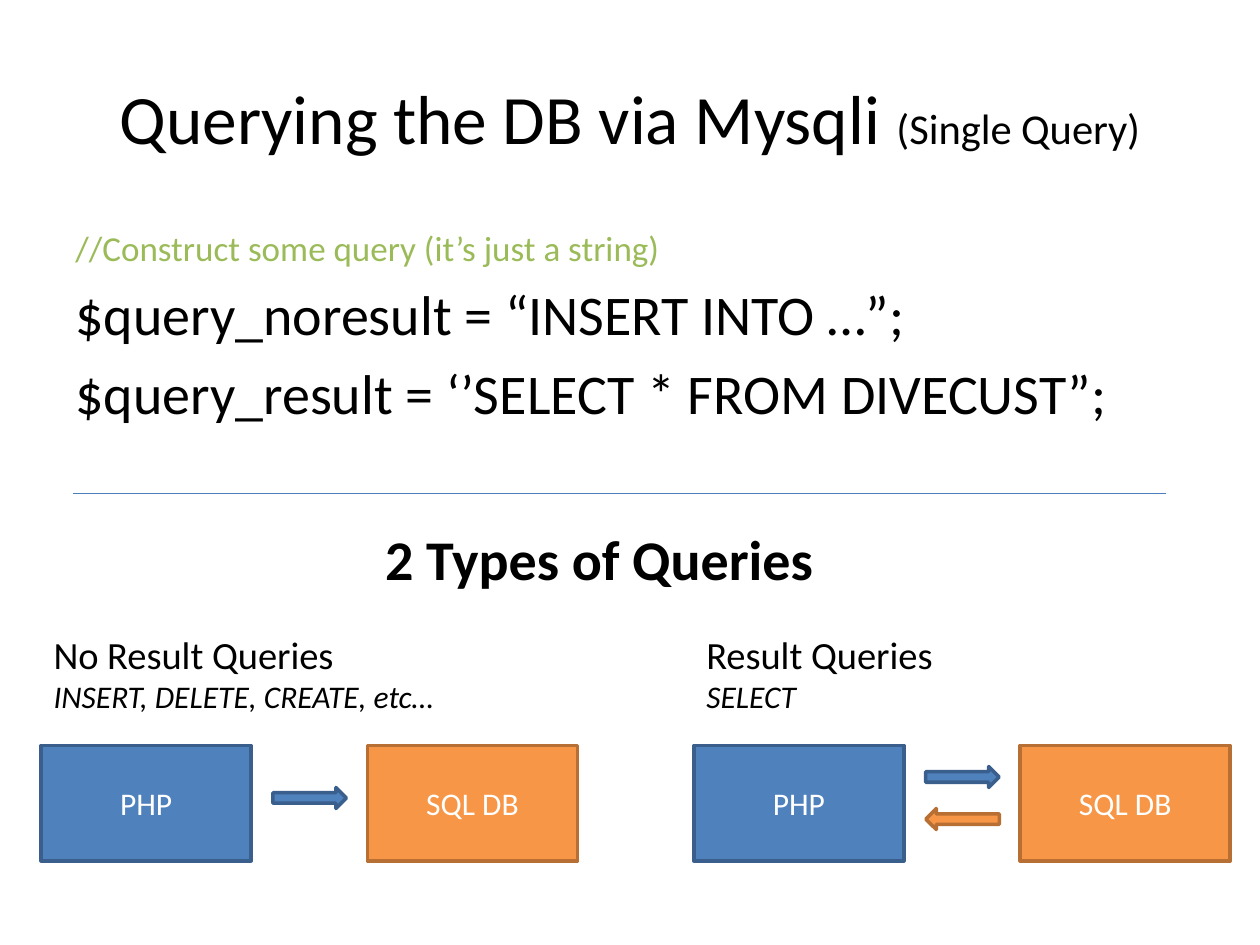
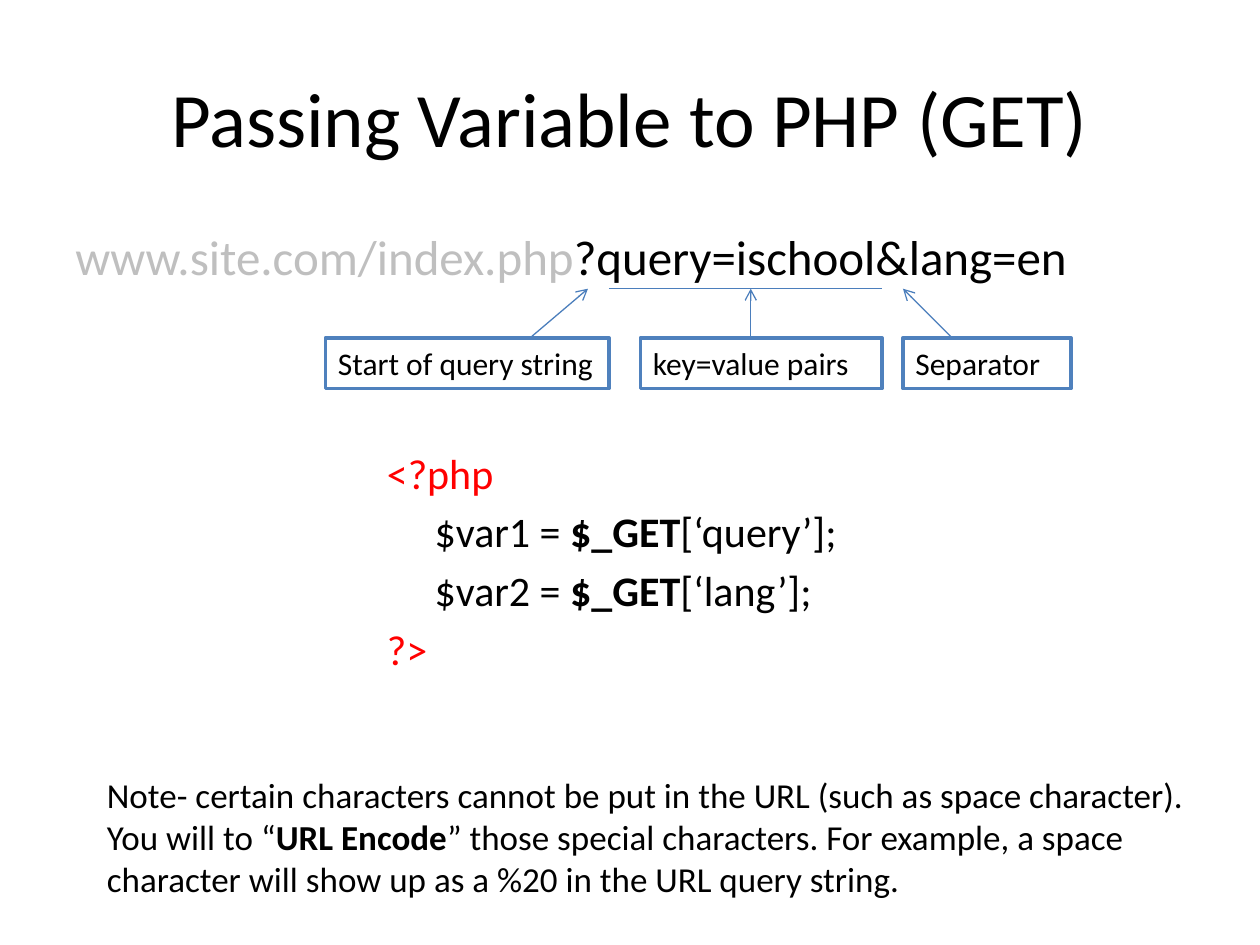
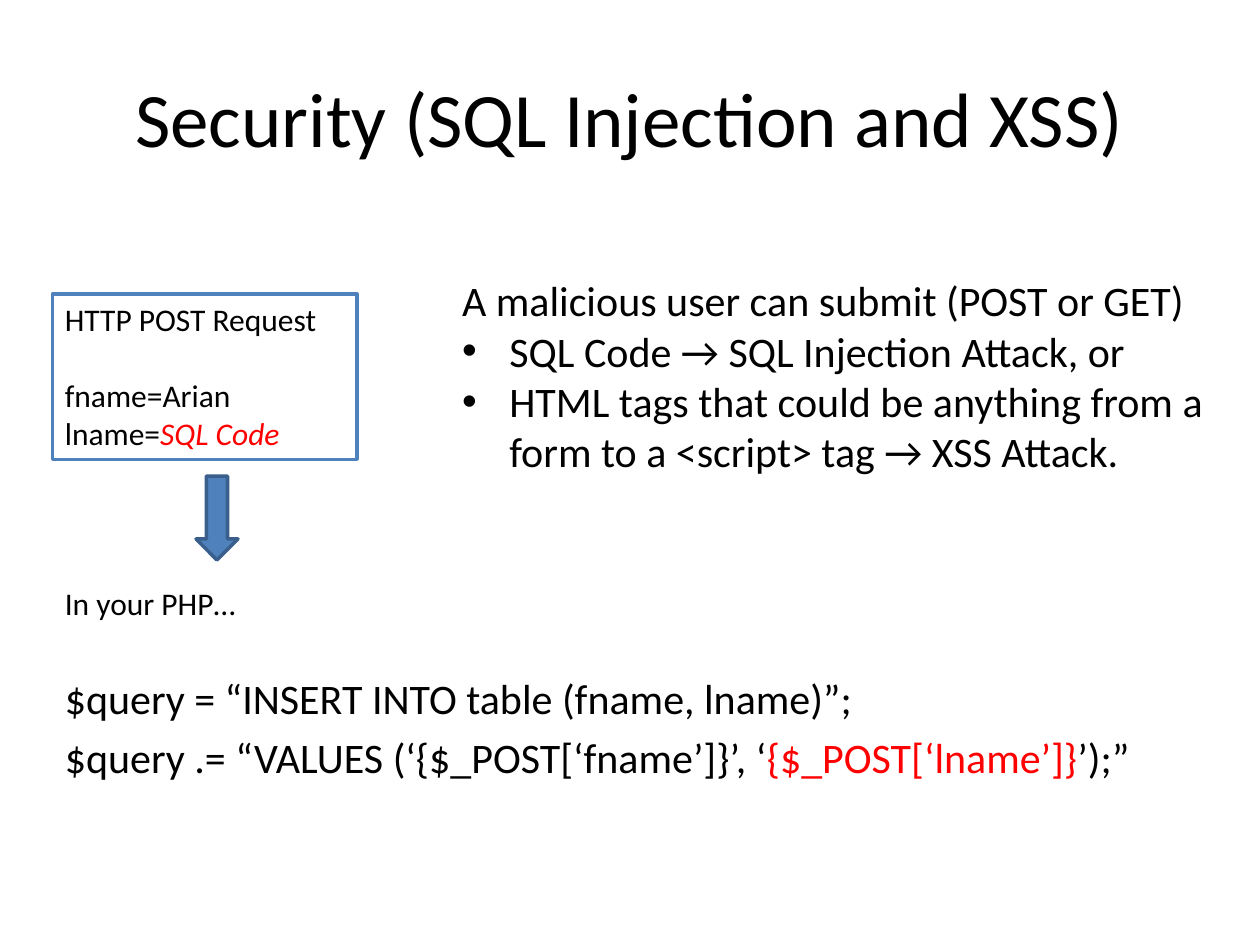
from dataclasses import dataclass

from lxml.etree import SubElement
from pptx import Presentation
from pptx.dml.color import RGBColor
from pptx.enum.shapes import MSO_CONNECTOR, MSO_SHAPE
from pptx.enum.text import MSO_ANCHOR, PP_ALIGN
from pptx.oxml.ns import qn
from pptx.util import Pt

BLACK = RGBColor(0x00, 0x00, 0x00)
WHITE = RGBColor(0xFF, 0xFF, 0xFF)
GRAY = RGBColor(0xBF, 0xBF, 0xBF)
RED = RGBColor(0xFF, 0x00, 0x00)
GREEN = RGBColor(0x9B, 0xBB, 0x59)
BLUE = RGBColor(0x4F, 0x81, 0xBD)
DARK_BLUE = RGBColor(0x3A, 0x5F, 0x8C)
LINE_BLUE = RGBColor(0x4B, 0x7E, 0xBC)
ORANGE = RGBColor(0xF7, 0x96, 0x46)
DARK_ORANGE = RGBColor(0xB7, 0x6F, 0x34)

FONT = "Calibri"
BODY_BOX = (36, 126, 648, 356.4)
BLUE_STYLE = (BLUE, DARK_BLUE)
ORANGE_STYLE = (ORANGE, DARK_ORANGE)


@dataclass
class Run:
    text: str
    color: RGBColor = BLACK
    bold: bool = False
    italic: bool = False
    size: float = 0


@dataclass
class Para:
    """A paragraph; size applies to every run that sets none of its own."""
    runs: list
    size: float = 18
    align: PP_ALIGN = PP_ALIGN.LEFT
    spaced: bool = False
    before: float = 0
    indent: float = 0
    bullet: str = ""


class Deck:
    def __init__(self):
        self.prs = Presentation()
        self.prs.slide_width, self.prs.slide_height = Pt(720), Pt(540)
        self.s = None

    def slide(self, *title_runs, size=44):
        self.s = self.prs.slides.add_slide(self.prs.slide_layouts[6])
        title = Para(title_runs, size, PP_ALIGN.CENTER)
        self.text((36, 21.6, 648, 90), [title], MSO_ANCHOR.MIDDLE)

    def add_paras(self, tf, paras, anchor):
        tf.word_wrap = True
        tf.vertical_anchor = anchor
        for i, para in enumerate(paras):
            p = tf.add_paragraph() if i else tf.paragraphs[0]
            p.alignment = para.align
            pPr = p._p.get_or_add_pPr()
            if para.before:
                p.space_before = Pt(para.before)
            elif para.spaced:
                SubElement(SubElement(pPr, qn("a:spcBef")), qn("a:spcPct"), val="20000")
            if para.indent:
                pPr.set("marL", str(Pt(para.indent)))
            if para.bullet:
                pPr.set("indent", str(-Pt(para.indent)))
                SubElement(pPr, qn("a:buFont"), typeface="Arial")
                SubElement(pPr, qn("a:buChar"), char=para.bullet)
            for run in para.runs:
                r = p.add_run()
                r.text = run.text
                r.font.name = FONT
                r.font.size = Pt(run.size or para.size)
                r.font.color.rgb = run.color
                r.font.bold = run.bold
                r.font.italic = run.italic

    def text(self, box, paras, anchor=MSO_ANCHOR.TOP):
        sp = self.s.shapes.add_textbox(*map(Pt, box))
        self.add_paras(sp.text_frame, paras, anchor)

    def shape(self, kind, box, style, paras=(), anchor=MSO_ANCHOR.MIDDLE, rotation=0):
        fill, line = style
        sp = self.s.shapes.add_shape(kind, *map(Pt, box))
        sp.shadow.inherit = False
        sp.rotation = rotation
        sp.fill.solid()
        sp.fill.fore_color.rgb = fill
        sp.line.color.rgb = line
        sp.line.width = Pt(2)
        self.add_paras(sp.text_frame, paras, anchor)

    def node(self, box, label, style):
        para = Para([Run(label, WHITE)], align=PP_ALIGN.CENTER)
        self.shape(MSO_SHAPE.RECTANGLE, box, style, [para])

    def callout(self, box, paras):
        self.shape(MSO_SHAPE.RECTANGLE, box, (WHITE, BLUE), paras, MSO_ANCHOR.TOP)

    def line(self, start, end, arrow=False):
        c = self.s.shapes.add_connector(MSO_CONNECTOR.STRAIGHT, *map(Pt, start + end))
        c.line.color.rgb = LINE_BLUE
        c.line.width = Pt(0.75)
        spPr = c._element.spPr
        if arrow:
            SubElement(spPr.find(qn("a:ln")), qn("a:tailEnd"), type="arrow")
        SubElement(spPr, qn("a:effectLst"))


def query_type(deck, x, name, statements, arrows):
    """Heading, two nodes and the arrows (top, style, rotation) between them."""
    deck.text((x, 357, 306, 55.4), [Para([Run(name)], 22),
                                    Para([Run(statements, italic=True)])])
    deck.node((x, 426, 120, 66), "PHP", BLUE_STYLE)
    deck.node((x + 186.5, 426, 120, 66), "SQL DB", ORANGE_STYLE)
    for top, style, rotation in arrows:
        deck.shape(MSO_SHAPE.RIGHT_ARROW, (x + 132.5, top, 42, 12), style, rotation=rotation)


def single_query(deck):
    deck.slide(Run("Querying the DB via Mysqli "), Run("(Single Query)", size=24.3), size=39.6)
    deck.text(BODY_BOX, [
        Para([Run("//Construct some query (it’s just a string)", GREEN)], 20, spaced=True),
        Para([Run("$query_noresult = “INSERT INTO …”;")], 32, spaced=True),
        Para([Run("$query_result = ‘’SELECT * FROM DIVECUST”;")], 32, spaced=True),
    ])
    deck.line((42, 282), (666, 282))
    deck.text((213, 296, 282, 46), [Para([Run("2 Types of Queries", bold=True)], 32)])
    query_type(deck, 23.5, "No Result Queries", "INSERT, DELETE, CREATE, etc…",
               [(450, BLUE_STYLE, 0)])
    query_type(deck, 396.5, "Result Queries", "SELECT",
               [(438, BLUE_STYLE, 0), (462, ORANGE_STYLE, 180)])


def passing_variables(deck):
    deck.slide(Run("Passing Variable to PHP (GET)"))
    deck.text(BODY_BOX, [Para([Run("www.site.com/index.php", GRAY),
                               Run("?query=ischool&lang=en")], 28, spaced=True)])
    url_bottom, callout_top = 165, 193
    deck.line((348, url_bottom), (504, url_bottom))
    for label, left, width, start_x, end_x in [
        ("Start of query string", 186, 162, 303, 336),
        ("key=value pairs", 366, 138, 429, 429),
        ("Separator", 516, 96, 544, 516),
    ]:
        deck.line((start_x, callout_top), (end_x, url_bottom), arrow=True)
        deck.callout((left, callout_top, width, 29), [Para([Run(label)])])

    assignments = [
        Para([Run(f"${var} = "), Run("$_GET", bold=True), Run(f"[‘{key}’];")],
             24, spaced=True, indent=27.3)
        for var, key in [("var1", "query"), ("var2", "lang")]
    ]
    deck.text((214, 252, 350, 180), [
        Para([Run("<?php", RED)], 24, spaced=True),
        *assignments,
        Para([Run("?>", RED)], 24, spaced=True),
    ])
    deck.text((54, 438.5, 630, 101.5), [Para([
        Run("Note- certain characters cannot be put in the URL (such as space character). "
            "You will to “"),
        Run("URL Encode", bold=True),
        Run("” those special characters. For example, a space character will show up "
            "as a %20 in the URL query string."),
    ], 20)])


def security(deck):
    deck.slide(Run("Security (SQL Injection and XSS)"))
    deck.callout((30, 168, 174, 94.5), [
        Para([Run("HTTP POST Request")]),
        Para([Run("fname=Arian")], before=22),
        Para([Run("lname="), Run("SQL Code", RED, italic=True)]),
    ])
    deck.shape(MSO_SHAPE.DOWN_ARROW, (112, 272, 24, 48), BLUE_STYLE)
    deck.text((30, 330, 678, 180), [
        Para([Run("In your PHP…")], spaced=True),
        Para([Run("$query = “INSERT INTO table (fname, lname)”;")], 24, before=29.3),
        Para([Run("$query .= “VALUES (‘{$_POST[‘fname’]}’, ‘"),
              Run("{$_POST[‘lname’]}", RED), Run("’);”")], 24, spaced=True),
    ])
    threats = ["SQL Code → SQL Injection Attack, or",
               "HTML tags that could be anything from a form to a <script> tag → XSS Attack."]
    deck.text((257, 153.5, 438, 124), [
        Para([Run("A malicious user can submit (POST or GET)")], 24),
        *[Para([Run(threat)], 24, indent=27, bullet="•") for threat in threats],
    ])


def main():
    deck = Deck()
    single_query(deck)
    passing_variables(deck)
    security(deck)
    deck.prs.save("out.pptx")


if __name__ == "__main__":
    main()
